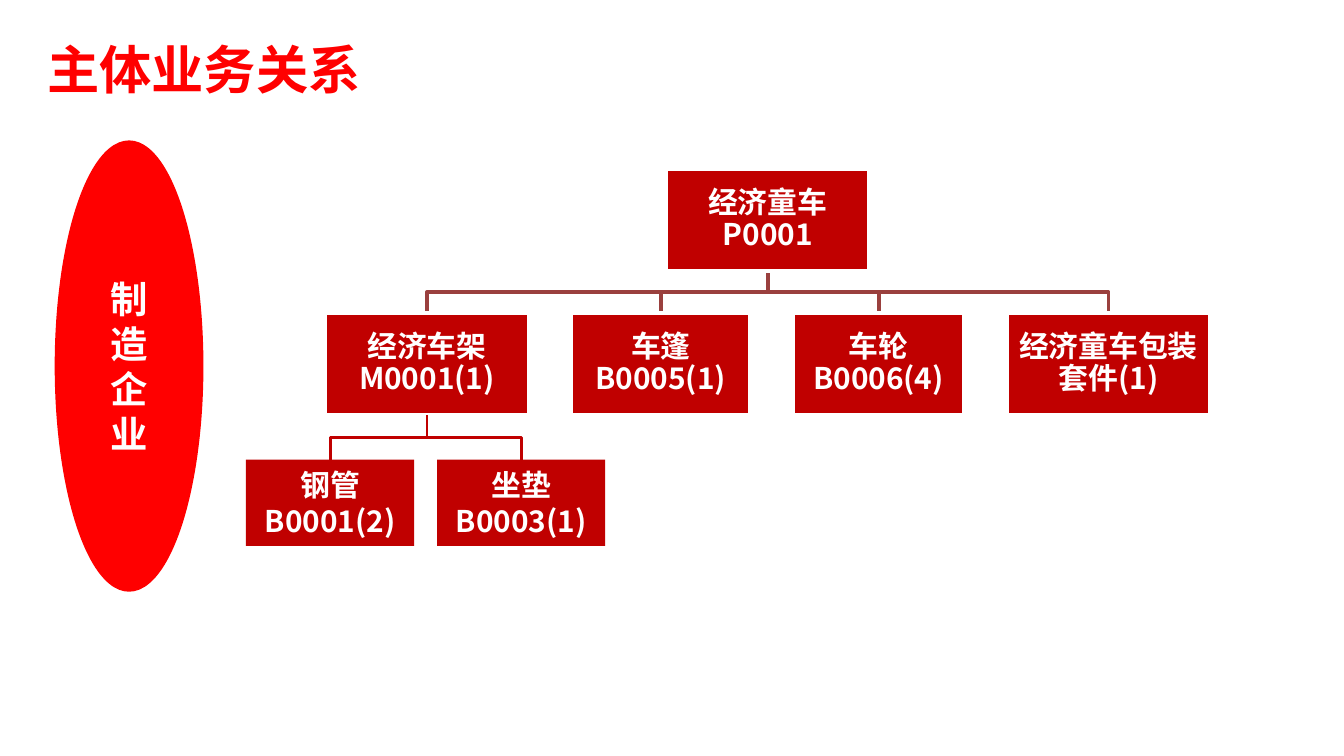
from dataclasses import dataclass

from lxml.etree import SubElement
from pptx import Presentation
from pptx.dml.color import RGBColor
from pptx.enum.shapes import MSO_CONNECTOR, MSO_SHAPE
from pptx.enum.text import MSO_ANCHOR, PP_ALIGN
from pptx.oxml.ns import qn
from pptx.util import Cm, Pt


@dataclass(frozen=True)
class Theme:
    red: RGBColor = RGBColor(0xFF, 0x00, 0x00)
    box: RGBColor = RGBColor(0xC0, 0x00, 0x00)
    branch: RGBColor = RGBColor(0x9A, 0x40, 0x3E)
    white: RGBColor = RGBColor(0xFF, 0xFF, 0xFF)
    heading_font: str = "Calibri"
    box_font: str = "Noto Sans CJK SC"
    title_size: int = 28
    role_size: int = 20
    box_size: int = 16
    thick: float = 2
    thin: float = 1.5


@dataclass(frozen=True)
class Box:
    left: float
    top: float
    width: float
    height: float

    @property
    def center(self):
        return self.left + self.width / 2

    @property
    def bottom(self):
        return self.top + self.height


THEME = Theme()
PART_GAP = 0.81
MATERIAL_GAP = 0.43
PARTS = [
    ("经济车架M0001(1)", 3.84),
    ("车篷B0005(1)", 3.38),
    ("车轮B0006(4)", 3.23),
    ("经济童车包装套件(1)", 3.84),
]
MATERIALS = [("钢管B0001(2)", 3.18), ("坐垫B0003(1)", 3.18)]


def row_of_boxes(items, left, top, height, gap):
    boxes = []
    for _, width in items:
        boxes.append(Box(left, top, width, height))
        left += width + gap
    return boxes


def middle(boxes):
    return (boxes[0].center + boxes[-1].center) / 2


def format_text(text_frame, font_name, size, color, alignment):
    for paragraph in text_frame.paragraphs:
        paragraph.alignment = alignment
        for run in paragraph.runs:
            run.font.name = font_name
            run.font.size = Pt(size)
            run.font.bold = True
            run.font.color.rgb = color


def add_title(slide, text):
    title = slide.shapes.title
    title.left, title.top, title.width, title.height = Cm(0.64), Cm(0.58), Cm(19.25), Cm(1.17)
    text_frame = title.text_frame
    text_frame.text = text
    text_frame.vertical_anchor = MSO_ANCHOR.TOP
    format_text(text_frame, THEME.heading_font, THEME.title_size, THEME.red, PP_ALIGN.LEFT)


def add_filled_shape(slide, kind, box, fill, line, text, font_name, size):
    shape = slide.shapes.add_shape(kind, Cm(box.left), Cm(box.top), Cm(box.width), Cm(box.height))
    shape.shadow.inherit = False
    shape.fill.solid()
    shape.fill.fore_color.rgb = fill
    if line is None:
        shape.line.fill.background()
    else:
        shape.line.color.rgb = line
        shape.line.width = Pt(THEME.thick)
    text_frame = shape.text_frame
    text_frame.text = text
    text_frame.word_wrap = True
    text_frame.vertical_anchor = MSO_ANCHOR.MIDDLE
    format_text(text_frame, font_name, size, THEME.white, PP_ALIGN.CENTER)
    return shape


def add_part(slide, box, text):
    shape = add_filled_shape(slide, MSO_SHAPE.RECTANGLE, box, THEME.box, THEME.white,
                             text, THEME.box_font, THEME.box_size)
    text_frame = shape.text_frame
    text_frame.margin_left = text_frame.margin_right = Cm(0.03)
    text_frame.margin_top = text_frame.margin_bottom = Cm(0.03)
    text_frame.paragraphs[0].line_spacing = 0.9


def add_material(slide, box, text):
    add_filled_shape(slide, MSO_SHAPE.RECTANGLE, box, THEME.box, None,
                     text, THEME.box_font, THEME.box_size)


def add_path(slide, points, color, width):
    corners = [(Cm(x), Cm(y)) for x, y in points]
    builder = slide.shapes.build_freeform(*corners[0])
    builder.add_line_segments(corners[1:], close=False)
    shape = builder.convert_to_shape()
    shape.shadow.inherit = False
    shape.fill.background()
    shape.line.color.rgb = color
    shape.line.width = Pt(width)


def add_stem(slide, x, top, bottom):
    connector = slide.shapes.add_connector(MSO_CONNECTOR.STRAIGHT, Cm(x), Cm(top), Cm(x), Cm(bottom))
    connector.line.color.rgb = THEME.box
    connector.line.width = Pt(THEME.thin)
    SubElement(connector.element.spPr, qn("a:effectLst"))


def main():
    presentation = Presentation()
    presentation.slide_width, presentation.slide_height = Cm(25.4), Cm(14.29)
    slide = presentation.slides.add_slide(presentation.slide_layouts[5])

    add_title(slide, "主体业务关系")
    add_filled_shape(slide, MSO_SHAPE.OVAL, Box(1.07, 2.69, 2.74, 8.46), THEME.red, THEME.red,
                     "\n".join("制造企业"), THEME.heading_font, THEME.role_size)

    parts = row_of_boxes(PARTS, 6.15, 5.92, 1.92, PART_GAP)
    materials = row_of_boxes(MATERIALS, 4.65, 8.69, 1.63, MATERIAL_GAP)
    product = Box(middle(parts) - 1.92, 3.2, 3.84, 1.92)
    frame = parts[0]

    branch_y = (product.bottom + frame.top) / 2
    for part in parts:
        add_path(slide, [(product.center, product.bottom), (product.center, branch_y),
                         (part.center, branch_y), (part.center, part.top)],
                 THEME.branch, THEME.thick)

    add_part(slide, product, "经济童车P0001")
    for box, (text, _) in zip(parts, PARTS):
        add_part(slide, box, text)
    for box, (text, _) in zip(materials, MATERIALS):
        add_material(slide, box, text)

    fork_y = (frame.bottom + materials[0].top) / 2
    first, last = materials
    add_path(slide, [(first.center, first.top), (first.center, fork_y),
                     (last.center, fork_y), (last.center, last.top)], THEME.box, THEME.thin)
    add_stem(slide, frame.center, frame.bottom, fork_y)

    presentation.save("out.pptx")


if __name__ == "__main__":
    main()
